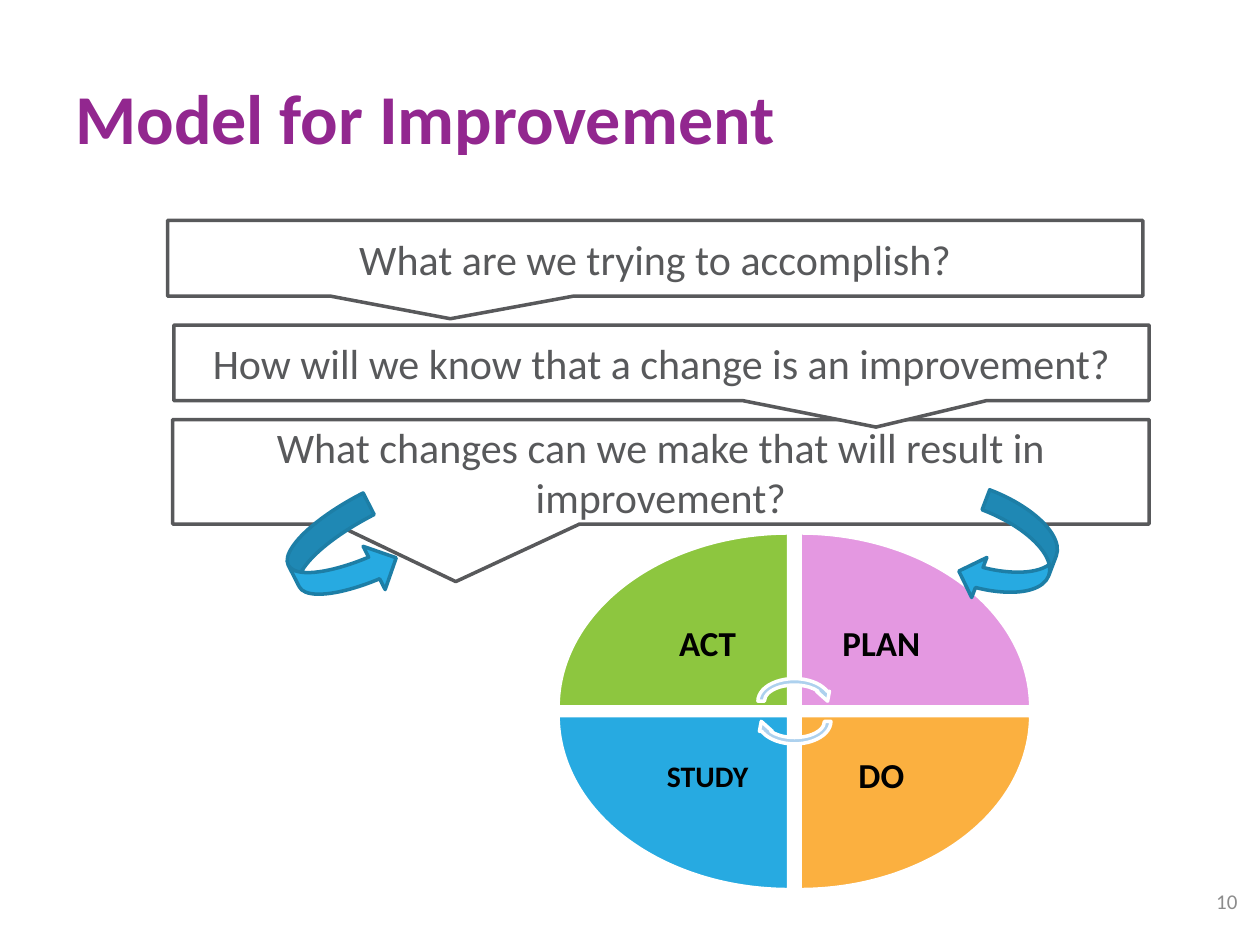
from pptx import Presentation
from pptx import util as u
from pptx.dml.color import RGBColor
from pptx.enum import shapes, text

PURPLE = RGBColor(0x92, 0x27, 0x8F)
GREEN = RGBColor(0x8D, 0xC6, 0x3F)
PINK = RGBColor(0xE4, 0x98, 0xE1)
ORANGE = RGBColor(0xFB, 0xB0, 0x40)
BLUE = RGBColor(0x27, 0xAA, 0xE1)
DARK_BLUE = RGBColor(0x1D, 0x7E, 0xA6)
PALE_BLUE = RGBColor(0xAD, 0xD1, 0xEE)
GRAY = RGBColor(0x58, 0x59, 0x5B)
LIGHT_GRAY = RGBColor(0x8C, 0x8C, 0x8C)
BLACK = RGBColor(0, 0, 0)
WHITE = RGBColor(0xFF, 0xFF, 0xFF)

COLUMNS, ROWS = 10, 7.5
SHAPE = shapes.MSO_SHAPE
ALIGN = text.PP_ALIGN


class SlideBuilder:
    """Draws styled elements on one slide, placed in grid columns and rows."""

    def __init__(self, presentation):
        self.font = "Calibri"
        self.line_width = u.Pt(2)
        self.column = presentation.slide_width / COLUMNS
        self.row = presentation.slide_height / ROWS
        self.slide = presentation.slides.add_slide(presentation.slide_layouts[5])

    def box(self, left, top, width, height):
        return (round(left * self.column), round(top * self.row),
                round(width * self.column), round(height * self.row))

    def add_words(self, shape, words, size, color, align=ALIGN.CENTER, bold=False, spacing=None):
        frame = shape.text_frame
        frame.word_wrap = True
        frame.auto_size = text.MSO_AUTO_SIZE.NONE
        frame.vertical_anchor = text.MSO_ANCHOR.MIDDLE
        paragraph = frame.paragraphs[0]
        paragraph.alignment = align
        if spacing:
            paragraph.line_spacing = spacing
        run = paragraph.add_run()
        run.text = words
        run.font.name = self.font
        run.font.size = u.Pt(size)
        run.font.bold = bold
        run.font.color.rgb = color

    def title(self, words, *place):
        title = self.slide.shapes.title
        title.left, title.top, title.width, title.height = self.box(*place)
        self.add_words(title, words, 40, PURPLE, ALIGN.LEFT, bold=True)

    def label(self, words, place, size, color, inset=None, **style):
        label = self.slide.shapes.add_textbox(*self.box(*place))
        if inset is not None:
            frame = label.text_frame
            frame.margin_left = frame.margin_right = u.Inches(inset)
            frame.margin_top = frame.margin_bottom = u.Inches(inset)
        self.add_words(label, words, size, color, **style)

    def shape(self, kind, place, fill, line, rotation=0):
        shape = self.slide.shapes.add_shape(kind, *self.box(*place))
        shape.shadow.inherit = False
        shape.fill.solid()
        shape.fill.fore_color.rgb = fill
        shape.line.color.rgb = line
        shape.line.width = self.line_width
        shape.rotation = rotation
        return shape

    def wedge(self, left, top, width, height, fill, rotation):
        if rotation % 180:
            left += (width - height) / 2
            top += (height - width) / 2
            width, height = height, width
        self.shape(SHAPE.PIE_WEDGE, (left, top, width, height), fill, WHITE, rotation)

    def callout(self, words, place, pointer):
        callout = self.shape(SHAPE.RECTANGULAR_CALLOUT, place, WHITE, GRAY)
        callout.adjustments[0], callout.adjustments[1] = pointer
        self.add_words(callout, words, 24, GRAY)


def main():
    presentation = Presentation()
    presentation.slide_width = u.Inches(10)
    presentation.slide_height = u.Inches(7.5)
    builder = SlideBuilder(presentation)

    builder.title("Model for Improvement", 0.5, 0.3, 6.33, 1.25)
    builder.label("10", (9.42, 6.95, 0.5, 0.4), 12, LIGHT_GRAY, align=ALIGN.RIGHT)

    wedge_width, wedge_height = 1.83, 1.38
    label_width, label_height = 1.29, 0.98
    lefts, tops = (4.43, 6.35), (4.23, 5.68)
    stages = [
        ("ACT", 0, 0, GREEN, 20, 0.16),
        ("PLAN", 1, 0, PINK, 20, 0.16),
        ("DO", 1, 1, ORANGE, 20, 0.16),
        ("STUDY", 0, 1, BLUE, 17, 0.13),
    ]
    for index, (words, column, row, fill, size, inset) in enumerate(stages):
        left, top = lefts[column], tops[row]
        builder.wedge(left, top, wedge_width, wedge_height, fill, 90 * index)
        label_left = left + (1 - column) * (wedge_width - label_width)
        label_top = top + (1 - row) * (wedge_height - label_height)
        builder.label(words, (label_left, label_top, label_width, label_height),
                      size, BLACK, inset, bold=True, spacing=0.9)

    for top, rotation in ((5.36, 0), (5.52, 180)):
        builder.shape(SHAPE.CIRCULAR_ARROW, (5.99, top, 0.63, 0.41), PALE_BLUE, WHITE, rotation)

    questions = [
        ("What changes can we make that will result in improvement?",
         (1.37, 3.33, 7.75, 0.83), (-0.21, 1.05)),
        ("How will we know that a change is an improvement?",
         (1.38, 2.58, 7.74, 0.6), (0.22, 0.85)),
        ("What are we trying to accomplish?",
         (1.33, 1.75, 7.74, 0.6), (-0.21, 0.8)),
    ]
    for question in questions:
        builder.callout(*question)

    builder.shape(SHAPE.CURVED_RIGHT_ARROW, (2.31, 4.05, 0.79, 0.77), BLUE, DARK_BLUE, 333)
    builder.shape(SHAPE.CURVED_LEFT_ARROW, (7.68, 3.98, 0.68, 0.86), BLUE, DARK_BLUE, 20.8)

    presentation.save("out.pptx")


if __name__ == "__main__":
    main()
